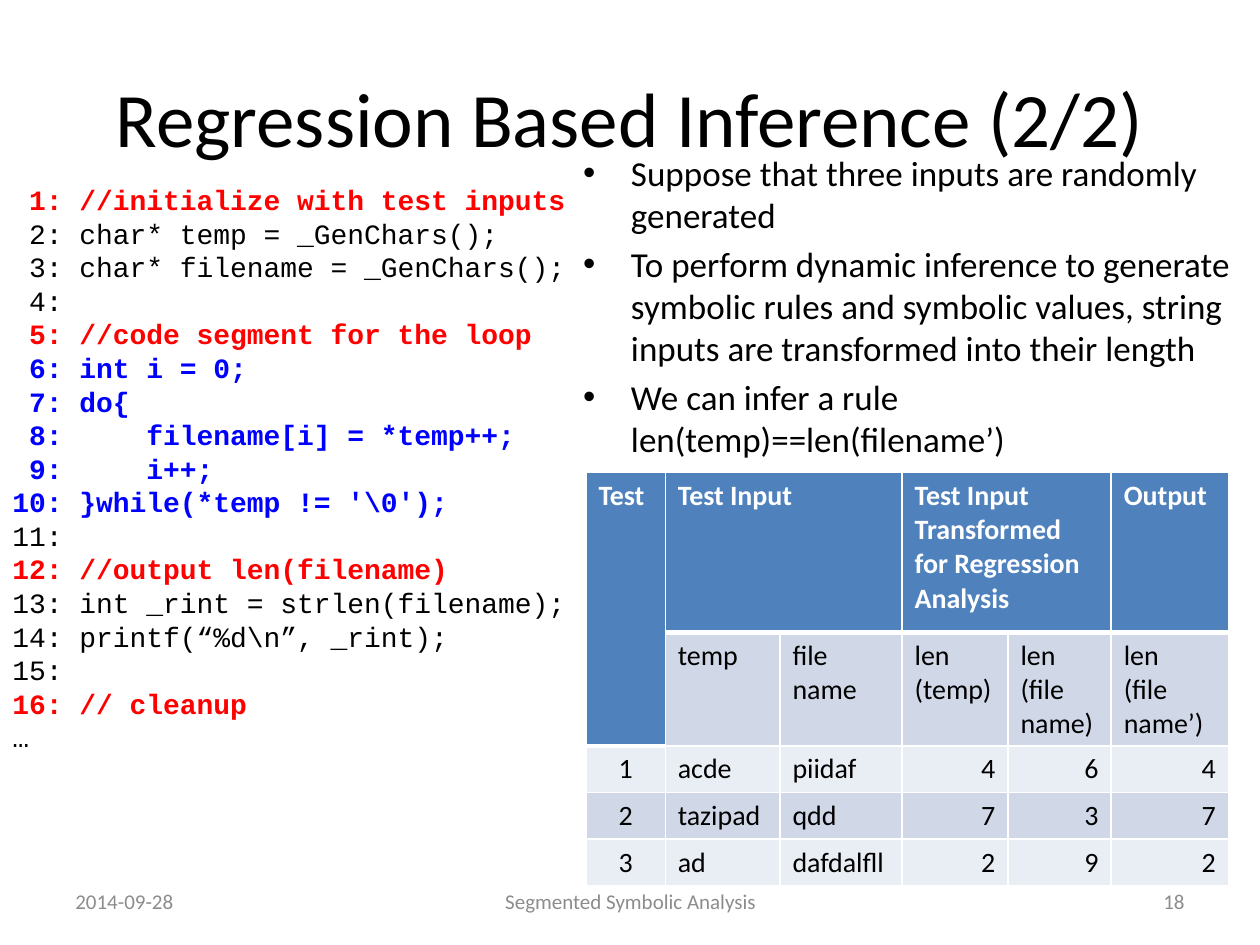
from lxml.etree import SubElement
from pptx import Presentation
from pptx.dml.color import RGBColor
from pptx.enum.text import MSO_ANCHOR, PP_ALIGN
from pptx.oxml.ns import qn
from pptx.util import Inches, Pt

BLACK, WHITE, RED, BLUE, GREY = "000000", "FFFFFF", "FF0000", "0000FF", "8C8C8C"
HEADER_FILL, BAND_FILLS = "4F81BD", ("D0D8E8", "E9EDF4")
LEFT, CENTER, RIGHT = PP_ALIGN.LEFT, PP_ALIGN.CENTER, PP_ALIGN.RIGHT

TITLE = "Regression Based Inference (2/2)"
FOOTERS = [
    ("2014-09-28", 0.5, 2.33, LEFT),
    ("Segmented Symbolic Analysis", 3.42, 3.17, CENTER),
    ("18", 7.17, 2.33, RIGHT),
]
CODE = [
    (RED, "//initialize with test inputs"),
    (BLACK, "char* temp = _GenChars();"),
    (BLACK, "char* filename = _GenChars();"),
    (BLACK, ""),
    (RED, "//code segment for the loop"),
    (BLUE, "int i = 0;"),
    (BLUE, "do{"),
    (BLUE, "    filename[i] = *temp++;"),
    (BLUE, "    i++;"),
    (BLUE, r"}while(*temp != '\0');"),
    (BLACK, ""),
    (RED, "//output len(filename)"),
    (BLACK, "int _rint = strlen(filename);"),
    (BLACK, r"printf(“%d\n”, _rint);"),
    (BLACK, ""),
    (RED, "// cleanup"),
]
BULLETS = [
    "Suppose that three inputs are randomly generated",
    "To perform dynamic inference to generate symbolic rules and symbolic values, "
    "string inputs are transformed into their length",
    "We can infer a rule len(temp)==len(filename’)",
]
TABLE = [
    ["Test", "Test Input", "", "Test Input\nTransformed\nfor Regression\nAnalysis", "", "Output"],
    ["", "temp", "file\nname", "len\n(temp)", "len\n(file\nname)", "len\n(file\nname’)"],
    ["1", "acde", "piidaf", "4", "6", "4"],
    ["2", "tazipad", "qdd", "7", "3", "7"],
    ["3", "ad", "dafdalfll", "2", "9", "2"],
]
MERGES = [((0, 0), (1, 0)), ((0, 1), (0, 2)), ((0, 3), (0, 4))]
COLUMN_WIDTHS = [0.63, 0.91, 0.97, 0.84, 0.82, 0.93]
ROW_HEIGHTS = [1.27, 0.9, 0.37, 0.37, 0.37]
DATA_ALIGNMENTS = [CENTER, LEFT, LEFT, RIGHT, RIGHT, RIGHT]


def color(value):
    return RGBColor.from_string(value)


def format_paragraph(paragraph, size, text_color, align=LEFT, bold=False, font="Calibri"):
    paragraph.alignment = align
    for run in paragraph.runs:
        run.font.name = font
        run.font.size = Pt(size)
        run.font.bold = bold
        run.font.color.rgb = color(text_color)


def add_text(slide, lines, left, top, width, height, anchor=MSO_ANCHOR.TOP, wrap=True):
    box = slide.shapes.add_textbox(Inches(left), Inches(top), Inches(width), Inches(height))
    frame = box.text_frame
    frame.word_wrap = wrap
    frame.vertical_anchor = anchor
    frame.text = "\n".join(lines)
    return frame.paragraphs


def add_bullet(paragraph):
    paragraph.space_before = Pt(4)
    properties = paragraph._p.get_or_add_pPr()
    properties.set("marL", str(Inches(0.38)))
    properties.set("indent", str(-Inches(0.38)))
    SubElement(properties, qn("a:buFont"), typeface="Arial")
    SubElement(properties, qn("a:buChar"), char="•")


def set_borders(cell, bottom):
    properties = cell._tc.get_or_add_tcPr()
    for side, width in (("L", 1), ("R", 1), ("T", 1), ("B", bottom)):
        line = SubElement(properties, qn(f"a:ln{side}"), w=str(Pt(width)))
        fill = SubElement(line, qn("a:solidFill"))
        SubElement(fill, qn("a:srgbClr"), val=WHITE)


def add_results_table(slide):
    frame = slide.shapes.add_table(
        len(TABLE), len(COLUMN_WIDTHS), Inches(4.65), Inches(3.75),
        Inches(sum(COLUMN_WIDTHS)), Inches(sum(ROW_HEIGHTS)))
    table = frame.table
    for column, width in zip(table.columns, COLUMN_WIDTHS):
        column.width = Inches(width)
    for row, height in zip(table.rows, ROW_HEIGHTS):
        row.height = Inches(height)
    for r, values in enumerate(TABLE):
        for c, value in enumerate(values):
            cell = table.cell(r, c)
            header = r == 0 or (r == 1 and c == 0)
            set_borders(cell, 3 if header else 1)
            cell.fill.solid()
            cell.fill.fore_color.rgb = color(HEADER_FILL if header else BAND_FILLS[(r - 1) % 2])
            cell.text_frame.text = value
            align = DATA_ALIGNMENTS[c] if r > 1 else LEFT
            for paragraph in cell.text_frame.paragraphs:
                format_paragraph(paragraph, 16, WHITE if header else BLACK, align, header)
    for first, last in MERGES:
        table.cell(*first).merge(table.cell(*last))


def main():
    presentation = Presentation()
    presentation.slide_width, presentation.slide_height = Inches(10), Inches(7.5)
    slide = presentation.slides.add_slide(presentation.slide_layouts[6])

    title = add_text(slide, [TITLE], 0.5, 0.3, 9, 1.25, MSO_ANCHOR.MIDDLE)
    format_paragraph(title[0], 44, BLACK, CENTER)

    for text, left, width, align in FOOTERS:
        footer = add_text(slide, [text], left, 6.95, width, 0.4, MSO_ANCHOR.MIDDLE)
        format_paragraph(footer[0], 12, GREY, align)

    lines = [f"{number:>2}: {text}".rstrip() for number, (_, text) in enumerate(CODE, 1)]
    colors = [line_color for line_color, _ in CODE]
    code = add_text(slide, lines + ["…"], 0, 1.4, 4.65, 4.95, wrap=False)
    for paragraph, line_color in zip(code, colors + [BLACK]):
        format_paragraph(paragraph, 16, line_color, bold=line_color != BLACK, font="Courier New")

    add_results_table(slide)

    for paragraph in add_text(slide, BULLETS, 4.53, 1.15, 5.47, 1.8):
        format_paragraph(paragraph, 20, BLACK)
        add_bullet(paragraph)

    presentation.save("out.pptx")


if __name__ == "__main__":
    main()
